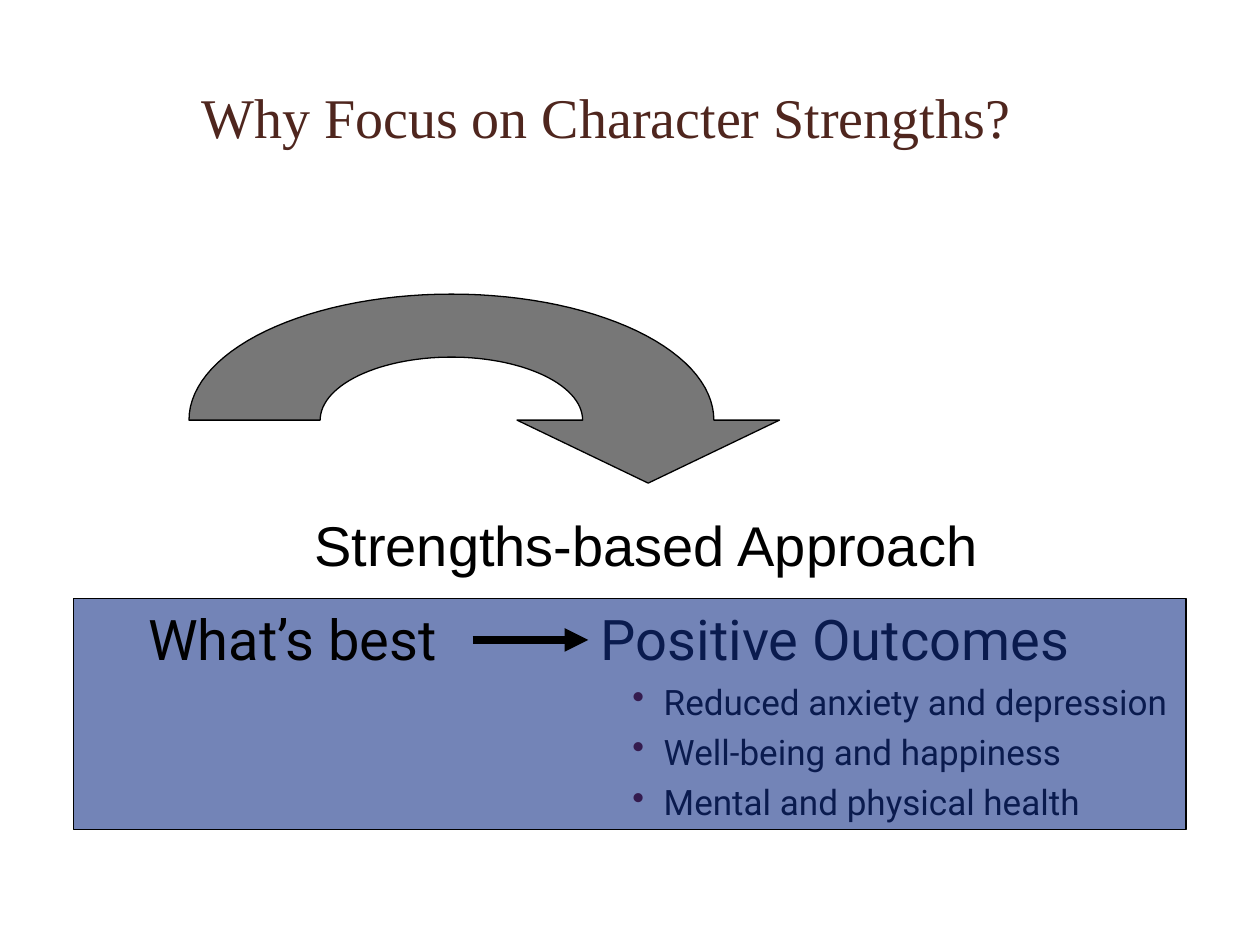
import math

from lxml import etree
from pptx import Presentation
from pptx import util as u
from pptx.dml.color import RGBColor
from pptx.enum import shapes, text
from pptx.oxml.ns import qn

COLORS = {
    "title": "4F261E",
    "ink": "000000",
    "bullet": "650000",
    "arch": "777777",
    "panel": "122E86",
}
BLANK_LAYOUT = 6


def rgb(name):
    return RGBColor.from_string(COLORS[name])


def add_text(slide, box, lines, font, color="ink", align=text.PP_ALIGN.LEFT,
             anchor=text.MSO_ANCHOR.TOP, wrap=True):
    """Add a text box; each line is (wording, size, space before) in points."""
    shape = slide.shapes.add_textbox(*map(u.Cm, box))
    frame = shape.text_frame
    frame.word_wrap = wrap
    frame.vertical_anchor = anchor
    frame.text = "\n".join(wording for wording, _, _ in lines)
    for paragraph, (_, size, before) in zip(frame.paragraphs, lines):
        paragraph.alignment = align
        paragraph.space_before = u.Pt(before)
        run_font = paragraph.runs[0].font
        run_font.name = font
        run_font.size = u.Pt(size)
        run_font.color.rgb = rgb(color)
    return frame


def add_bullet(paragraph):
    properties = paragraph._p.get_or_add_pPr()
    properties.set("marL", str(u.Cm(1.27)))
    properties.set("indent", str(u.Cm(-0.63)))
    bullet_color = etree.SubElement(properties, qn("a:buClr"))
    etree.SubElement(bullet_color, qn("a:srgbClr"), val=COLORS["bullet"])
    etree.SubElement(properties, qn("a:buChar"), char="•")


def style_shape(shape, fill):
    shape.shadow.inherit = False
    shape.fill.solid()
    shape.fill.fore_color.rgb = rgb(fill)
    shape.line.color.rgb = rgb("ink")
    shape.line.width = u.Pt(0.75)


def add_panel(slide, box, opacity):
    shape = slide.shapes.add_shape(shapes.MSO_SHAPE.RECTANGLE, *map(u.Cm, box))
    style_shape(shape, "panel")
    color = shape._element.spPr.find(".//" + qn("a:srgbClr"))
    etree.SubElement(color, qn("a:alpha"), val=str(opacity * 1000))


def half_ellipse(center_x, center_y, radius_x, radius_y, steps=60):
    """Points over the top of an ellipse, from left to right."""
    angles = [math.pi * (1 - step / steps) for step in range(steps + 1)]
    return [(center_x + radius_x * math.cos(angle),
             center_y - radius_y * math.sin(angle)) for angle in angles]


def add_arch_arrow(slide, center_x, center_y, radius_x, radius_y):
    """Half ring, half as wide as its radius, with a head at its right end."""
    outer = half_ellipse(center_x, center_y, radius_x, radius_y)
    inner = half_ellipse(center_x, center_y, radius_x / 2, radius_y / 2)
    head = [(center_x + radius_x * 1.25, center_y),
            (center_x + radius_x * 0.75, center_y + radius_y / 2),
            (center_x + radius_x * 0.25, center_y)]
    points = [(u.Cm(x), u.Cm(y)) for x, y in outer + head + inner[::-1]]
    builder = slide.shapes.build_freeform(*points[0])
    builder.add_line_segments(points[1:], close=True)
    style_shape(builder.convert_to_shape(), "arch")


def add_arrow(slide, left, right, y):
    connector = slide.shapes.add_connector(
        shapes.MSO_CONNECTOR.STRAIGHT, u.Cm(left), u.Cm(y), u.Cm(right), u.Cm(y))
    connector.line.color.rgb = rgb("ink")
    connector.line.width = u.Pt(4.5)
    etree.SubElement(connector.line._get_or_add_ln(), qn("a:tailEnd"), type="triangle")
    etree.SubElement(connector._element.spPr, qn("a:effectLst"))


def main():
    presentation = Presentation()
    presentation.slide_width = u.Cm(25.4)
    presentation.slide_height = u.Cm(19.05)
    slide = presentation.slides.add_slide(presentation.slide_layouts[BLANK_LAYOUT])

    # Title
    add_text(slide, (3.81, 0.76, 20.32, 3.18),
             [("Why Focus on Character Strengths?", 32, 0)],
             "Times New Roman", color="title", anchor=text.MSO_ANCHOR.MIDDLE)

    # Outcomes, lying under the translucent panel
    outcomes = add_text(slide, (11.86, 12.07, 12.22, 4.65), [
        ("Positive Outcomes", 32, 7.5),
        ("Reduced anxiety and depression", 20, 4.7),
        ("Well-being and happiness", 20, 4.7),
        ("Mental and physical health", 20, 4.7),
    ], "Roboto", wrap=False)
    for paragraph in outcomes.paragraphs[1:]:
        paragraph.level = 1
        add_bullet(paragraph)

    # Curved arrow and the approach it points to
    add_arch_arrow(slide, 9.1, 8.47, 5.29, 2.54)
    add_text(slide, (5.51, 10.16, 15.04, 1.6),
             [("Strengths-based Approach", 32, 18)],
             "Arial", align=text.PP_ALIGN.CENTER)

    # Panel with the starting point and the arrow to the outcomes
    add_panel(slide, (1.48, 12.07, 22.43, 4.65), opacity=59)
    add_text(slide, (2.74, 12.07, 6.5, 1.6), [("What’s best", 32, 7.5)],
             "Roboto", wrap=False)
    add_arrow(slide, 9.53, 11.86, 12.9)

    presentation.save("out.pptx")


if __name__ == "__main__":
    main()
